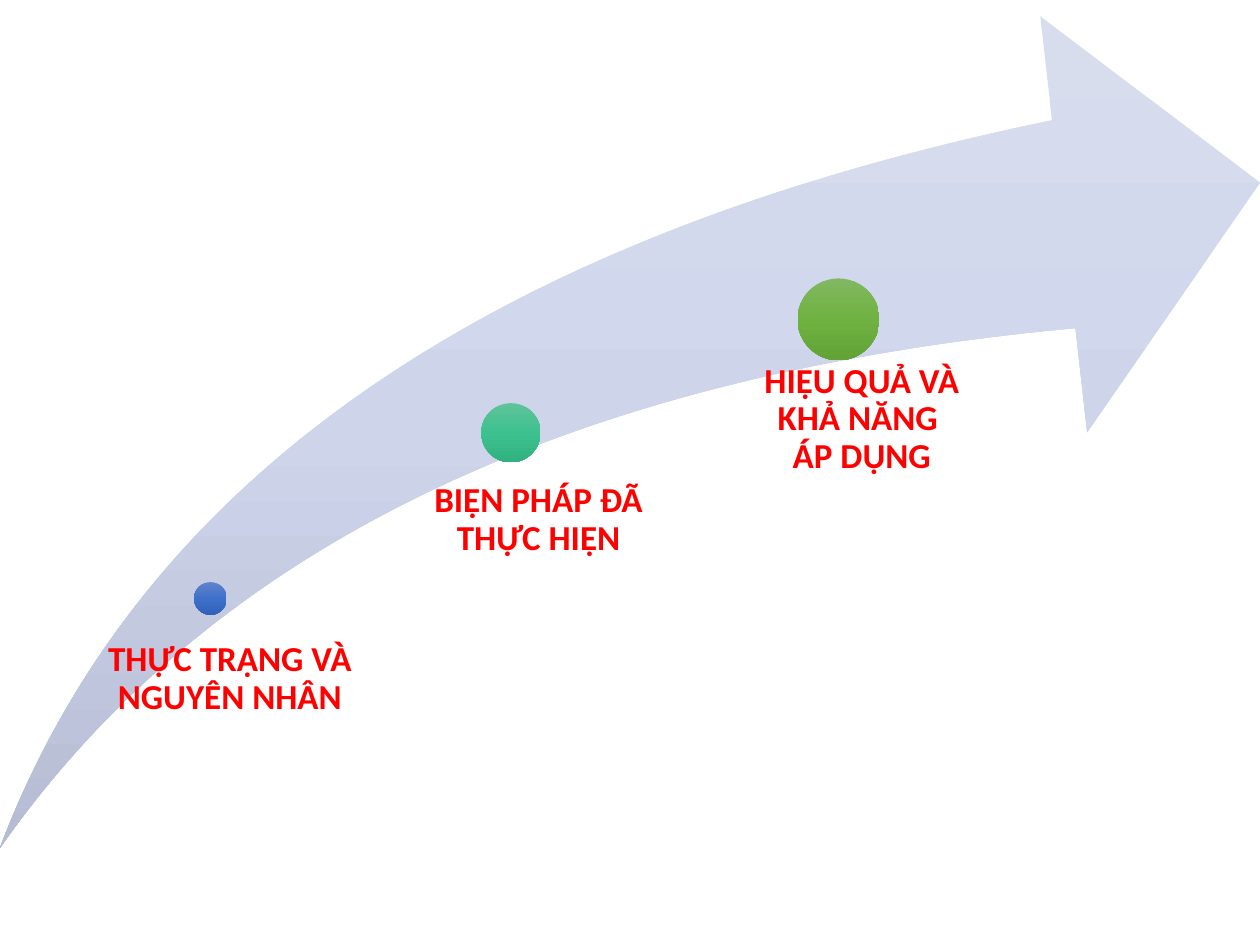
import copy
from dataclasses import dataclass

import pptx
import pptx.dml.color
import pptx.enum.shapes
import pptx.enum.text
import pptx.oxml.ns
import pptx.util

Inches = pptx.util.Inches
Pt = pptx.util.Pt
SHAPE = pptx.enum.shapes.MSO_SHAPE


@dataclass
class Box:
    left: float
    top: float
    width: float
    height: float

    def place(self) -> tuple:
        return tuple(map(Inches, (self.left, self.top, self.width, self.height)))


@dataclass
class Step:
    dot: Box
    shades: tuple[str, str, str]
    label: Box
    inset: float
    lines: tuple[str, ...]


ARROW = Box(0, 0.13, 10, 6.6)
ARROW_SHADES = ("D8DDEE", "CED5EB", "B5BCD3")
STEPS = (
    Step(Box(1.54, 4.62, 0.26, 0.26), ("6183CB", "3E70CA", "3062BB"),
         Box(0.59, 5.09, 2.33, 1.81), 0.14, ("THỰC TRẠNG VÀ NGUYÊN NHÂN",)),
    Step(Box(3.82, 3.2, 0.47, 0.47), ("60C39A", "3DC18F", "31B080"),
         Box(2.95, 3.83, 2.4, 3.4), 0.25, ("BIỆN PHÁP ĐÃ THỰC HIỆN",)),
    Step(Box(6.33, 2.21, 0.65, 0.65), ("81B861", "6FB242", "62A336"),
         Box(5.47, 2.88, 2.4, 4.34), 0.34, ("HIỆU QUẢ VÀ KHẢ NĂNG ", "ÁP DỤNG")),
)


def color(code: str) -> pptx.dml.color.RGBColor:
    return pptx.dml.color.RGBColor.from_string(code)


def add_shaded(slide, kind, box: Box, shades: tuple[str, str, str]):
    """Add a borderless shape with a three-stop gradient from top to bottom."""
    shape = slide.shapes.add_shape(kind, *box.place())
    shape.shadow.inherit = False
    shape.line.fill.background()
    shape.fill.gradient()
    shape.fill.gradient_angle = 270
    stops = shape._element.spPr.find(".//" + pptx.oxml.ns.qn("a:gsLst"))
    stops.append(copy.deepcopy(stops[-1]))
    for stop, shade, spot in zip(shape.fill.gradient_stops, shades, (0, 0.5, 1)):
        stop.color.rgb = color(shade)
        stop.position = spot
    return shape


def add_label(slide, step: Step) -> None:
    frame = slide.shapes.add_textbox(*step.label.place()).text_frame
    frame.word_wrap = True
    frame.margin_left = Inches(step.inset)
    frame.margin_top = frame.margin_right = frame.margin_bottom = 0
    para = frame.paragraphs[0]
    para.alignment = pptx.enum.text.PP_ALIGN.CENTER
    para.line_spacing = 0.9
    para.space_after = Pt(6)
    for index, line in enumerate(step.lines):
        if index:
            para.add_line_break()
        run = para.add_run()
        run.text = line
        run.font.name = "Calibri"
        run.font.size = Pt(20)
        run.font.bold = True
        run.font.color.rgb = color("FF0000")


def main() -> None:
    deck = pptx.Presentation()
    deck.slide_width, deck.slide_height = Inches(10), Inches(7.5)
    slide = deck.slides.add_slide(deck.slide_layouts[6])
    arrow = add_shaded(slide, SHAPE.SWOOSH_ARROW, ARROW, ARROW_SHADES)
    arrow.adjustments[0] = arrow.adjustments[1] = 0.25
    for step in STEPS:
        add_shaded(slide, SHAPE.OVAL, step.dot, step.shades)
        add_label(slide, step)
    deck.save("out.pptx")


if __name__ == "__main__":
    main()
